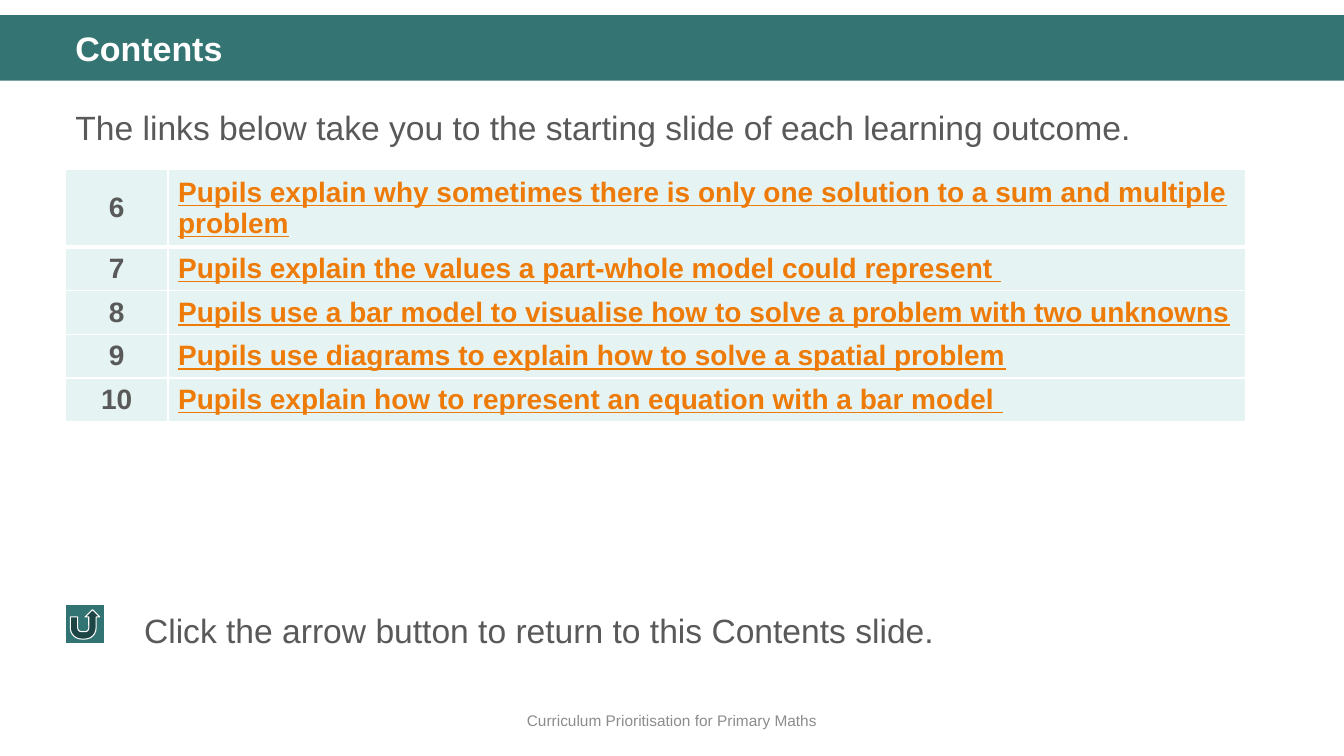
"""Build the Contents slide listing the learning outcomes."""
import lxml.etree
import pptx
import pptx.dml.color
import pptx.enum.shapes
import pptx.enum.text
import pptx.oxml.ns
import pptx.util

Pt = pptx.util.Pt
RGBColor = pptx.dml.color.RGBColor
SHAPE = pptx.enum.shapes.MSO_SHAPE
ALIGN = pptx.enum.text.PP_ALIGN
ANCHOR = pptx.enum.text.MSO_ANCHOR
qn = pptx.oxml.ns.qn

TEAL = RGBColor(0x34, 0x75, 0x74)
BUTTON_TEAL = RGBColor(0x32, 0x74, 0x73)
PALE_TEAL = RGBColor(0xE5, 0xF3, 0xF2)
ORANGE = RGBColor(0xEE, 0x7B, 0x08)
DARK_GREY = RGBColor(0x59, 0x59, 0x59)
MID_GREY = RGBColor(0x8C, 0x8C, 0x8C)
WHITE = RGBColor(0xFF, 0xFF, 0xFF)

LEFT = 46.8
OUTCOMES = [
    ("6", "Pupils explain why sometimes there is only one solution to a sum and multiple problem"),
    ("7", "Pupils explain the values a part-whole model could represent "),
    ("8", "Pupils use a bar model to visualise how to solve a problem with two unknowns"),
    ("9", "Pupils use diagrams to explain how to solve a spatial problem"),
    ("10", "Pupils explain how to represent an equation with a bar model "),
]


class SlideBuilder:
    font = "Arial"

    def __init__(self, prs):
        self.s = prs.slides.add_slide(prs.slide_layouts[6])

    def style(self, p, size, color, bold=False, underline=False, align=ALIGN.LEFT):
        p.alignment = align
        for r in p.runs:
            r.font.name = self.font
            r.font.size = Pt(size)
            r.font.bold = bold
            r.font.underline = underline
            r.font.color.rgb = color

    def shape(self, kind, x, y, w, h, fill, line=None):
        sp = self.s.shapes.add_shape(kind, Pt(x), Pt(y), Pt(w), Pt(h))
        sp.shadow.inherit = False
        sp.fill.solid()
        sp.fill.fore_color.rgb = fill
        if line is None:
            sp.line.fill.background()
        else:
            sp.line.color.rgb = line
            sp.line.width = Pt(0.75)

    def text(self, text, x, y, w, h, size, color, spacing=1.0, anchor=ANCHOR.TOP, **style):
        tf = self.s.shapes.add_textbox(Pt(x), Pt(y), Pt(w), Pt(h)).text_frame
        tf.word_wrap = True
        tf.vertical_anchor = anchor
        tf.text = text
        p = tf.paragraphs[0]
        p.line_spacing = spacing
        self.style(p, size, color, **style)

    def border(self, cell, side, width):
        tcPr = cell._tc.get_or_add_tcPr()
        ln = lxml.etree.SubElement(tcPr, qn("a:ln" + side), w=str(Pt(width)))
        fill = lxml.etree.SubElement(ln, qn("a:solidFill"))
        lxml.etree.SubElement(fill, qn("a:srgbClr"), val=str(WHITE))

    def cell(self, cell, text, widths, color, **style):
        for side, width in widths.items():
            self.border(cell, side, width)
        cell.fill.solid()
        cell.fill.fore_color.rgb = PALE_TEAL
        cell.vertical_anchor = ANCHOR.MIDDLE
        cell.text = text
        self.style(cell.text_frame.paragraphs[0], 20, color, bold=True, **style)

    def table(self, rows, x, y, col_widths, row_height):
        table = self.s.shapes.add_table(
            len(rows), len(col_widths), Pt(x), Pt(y),
            Pt(sum(col_widths)), Pt(row_height * len(rows))).table
        for col, width in zip(table.columns, col_widths):
            col.width = Pt(width)
        for i, (number, outcome) in enumerate(rows):
            table.rows[i].height = Pt(row_height)
            widths = {"L": 1, "R": 1, "T": 3 if i == 1 else 1, "B": 3 if i == 0 else 1}
            self.cell(table.cell(i, 0), number, widths, DARK_GREY, align=ALIGN.CENTER)
            self.cell(table.cell(i, 1), outcome, widths, ORANGE, underline=True)


def main():
    prs = pptx.Presentation()
    prs.slide_width, prs.slide_height = Pt(960), Pt(540)
    b = SlideBuilder(prs)
    b.shape(SHAPE.RECTANGLE, 0, 10.8, 960, 46.8, TEAL)
    b.text("Contents", LEFT, 19.5, 877, 34, 24.3, WHITE, spacing=0.9, bold=True)
    b.text("The links below take you to the starting slide of each learning outcome.",
           LEFT, 67, 877, 40, 24, DARK_GREY, spacing=1.2)
    b.table(OUTCOMES, LEFT, 121, [73.2, 770], 29.5)
    b.shape(SHAPE.ACTION_BUTTON_RETURN, LEFT, 432, 28, 28, BUTTON_TEAL, line=WHITE)
    b.text("Click the arrow button to return to this Contents slide.",
           95.8, 432, 815, 36, 24, DARK_GREY)
    b.text("Curriculum Prioritisation for Primary Maths",
           0, 500.4, 960, 28.8, 11, MID_GREY, anchor=ANCHOR.MIDDLE, align=ALIGN.CENTER)
    prs.save("out.pptx")


if __name__ == "__main__":
    main()
